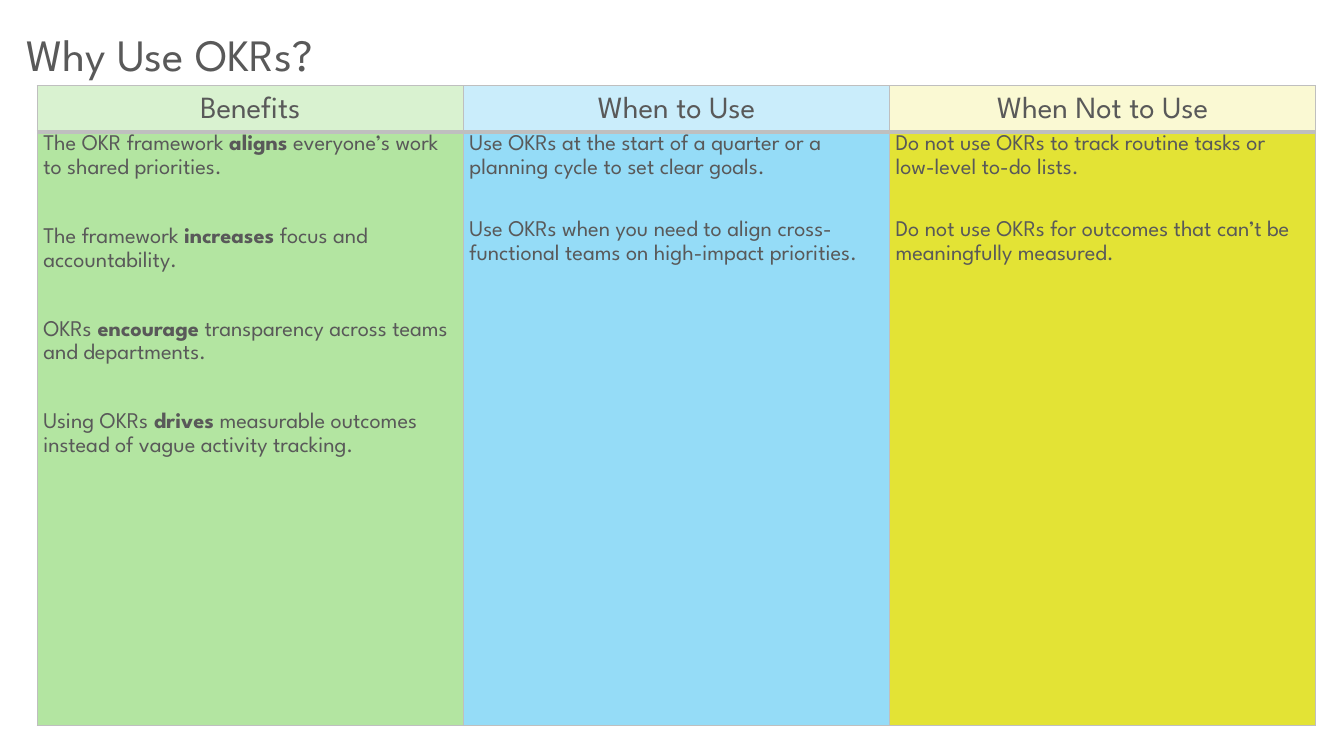
import pptx
import pptx.util
import pptx.dml.color
import pptx.enum.text
import pptx.oxml
import pptx.oxml.ns

Cm, Pt = pptx.util.Cm, pptx.util.Pt
RGBColor = pptx.dml.color.RGBColor
PP_ALIGN = pptx.enum.text.PP_ALIGN
MSO_ANCHOR = pptx.enum.text.MSO_ANCHOR

FONT = "League Spartan"
GREY = RGBColor(0x59, 0x59, 0x59)
BORDER = RGBColor(0xBF, 0xBF, 0xBF)
PALE_GREEN = RGBColor(0xD9, 0xF2, 0xD0)
PALE_BLUE = RGBColor(0xCA, 0xED, 0xFB)
PALE_YELLOW = RGBColor(0xFA, 0xF9, 0xD3)
GREEN = RGBColor(0xB3, 0xE5, 0xA1)
BLUE = RGBColor(0x95, 0xDC, 0xF7)
YELLOW = RGBColor(0xE3, 0xE3, 0x35)

TITLE = "Why Use OKRs?"
COLUMNS = [
    {"head": "Benefits", "head_fill": PALE_GREEN, "fill": GREEN, "gap": 32.5, "body": [
        ("The OKR framework ", "aligns", " everyone’s work to shared priorities."),
        ("The framework ", "increases", " focus and accountability."),
        ("OKRs", " encourage", " transparency across teams and departments."),
        ("Using OKRs", " drives", " measurable outcomes instead of vague activity tracking."),
    ]},
    {"head": "When to Use", "head_fill": PALE_BLUE, "fill": BLUE, "gap": 27.5, "body": [
        ("Use OKRs at the start of a quarter or a planning cycle to set clear goals.",),
        ("Use OKRs when you need to align cross-functional teams on high-impact priorities.",),
    ]},
    {"head": "When Not to Use", "head_fill": PALE_YELLOW, "fill": YELLOW, "gap": 27.5, "body": [
        ("Do not use OKRs to track routine tasks or low-level to-do lists.",),
        ("Do not use OKRs for outcomes that can’t be meaningfully measured.",),
    ]},
]
COL_W = Cm(10.74)
ROW_H = [Cm(1.17), Cm(14.96)]


def format_run(r, size, bold=False):
    r.font.name = FONT
    r.font.size = Pt(size)
    r.font.bold = bold
    r.font.color.rgb = GREY


def style_cell(cell, fill, top, bottom):
    tcPr = cell._tc.get_or_add_tcPr()
    for side, width in (("L", 1), ("R", 1), ("T", top), ("B", bottom)):
        tcPr.append(pptx.oxml.parse_xml(
            f'<a:ln{side} {pptx.oxml.ns.nsdecls("a")} w="{Pt(width)}"><a:solidFill>'
            f'<a:srgbClr val="{BORDER}"/></a:solidFill></a:ln{side}>'))
    cell.fill.solid()
    cell.fill.fore_color.rgb = fill
    cell.margin_left = cell.margin_right = Cm(0.15)
    cell.margin_top = cell.margin_bottom = 0


def fill_head(cell, text):
    cell.vertical_anchor = MSO_ANCHOR.MIDDLE
    p = cell.text_frame.paragraphs[0]
    p.text = text
    p.alignment = PP_ALIGN.CENTER
    p.line_spacing = 1.15
    p.space_after = Pt(8)
    format_run(p.runs[0], 22)


def fill_body(cell, items, gap):
    tf = cell.text_frame
    for i, parts in enumerate(items):
        p = tf.add_paragraph() if i else tf.paragraphs[0]
        p.line_spacing = 1.15
        p.space_after = Pt(gap)
        for j, part in enumerate(parts):
            r = p.add_run()
            r.text = part
            format_run(r, 16, bold=j == 1)


def main():
    prs = pptx.Presentation()
    prs.slide_width, prs.slide_height = Cm(33.87), Cm(19.05)
    s = prs.slides.add_slide(prs.slide_layouts[5])

    title = s.shapes.title
    title.left, title.top, title.width, title.height = Cm(0.41), Cm(0.53), Cm(33.45), Cm(1.63)
    tf = title.text_frame
    tf.text = TITLE
    tf.word_wrap = True
    tf.auto_size = pptx.enum.text.MSO_AUTO_SIZE.NONE
    tf.vertical_anchor = MSO_ANCHOR.BOTTOM
    tf.paragraphs[0].alignment = PP_ALIGN.LEFT
    format_run(tf.paragraphs[0].runs[0], 32)

    table = s.shapes.add_table(len(ROW_H), len(COLUMNS), Cm(0.94), Cm(2.16),
                               COL_W * len(COLUMNS), sum(ROW_H)).table
    table.first_row = table.horz_banding = False
    for row, height in zip(table.rows, ROW_H):
        row.height = height
    for i, column in enumerate(COLUMNS):
        table.columns[i].width = COL_W
        head, body = table.cell(0, i), table.cell(1, i)
        style_cell(head, column["head_fill"], 1, 3)
        style_cell(body, column["fill"], 3, 1)
        fill_head(head, column["head"])
        fill_body(body, column["body"], column["gap"])

    prs.save("out.pptx")


if __name__ == "__main__":
    main()
